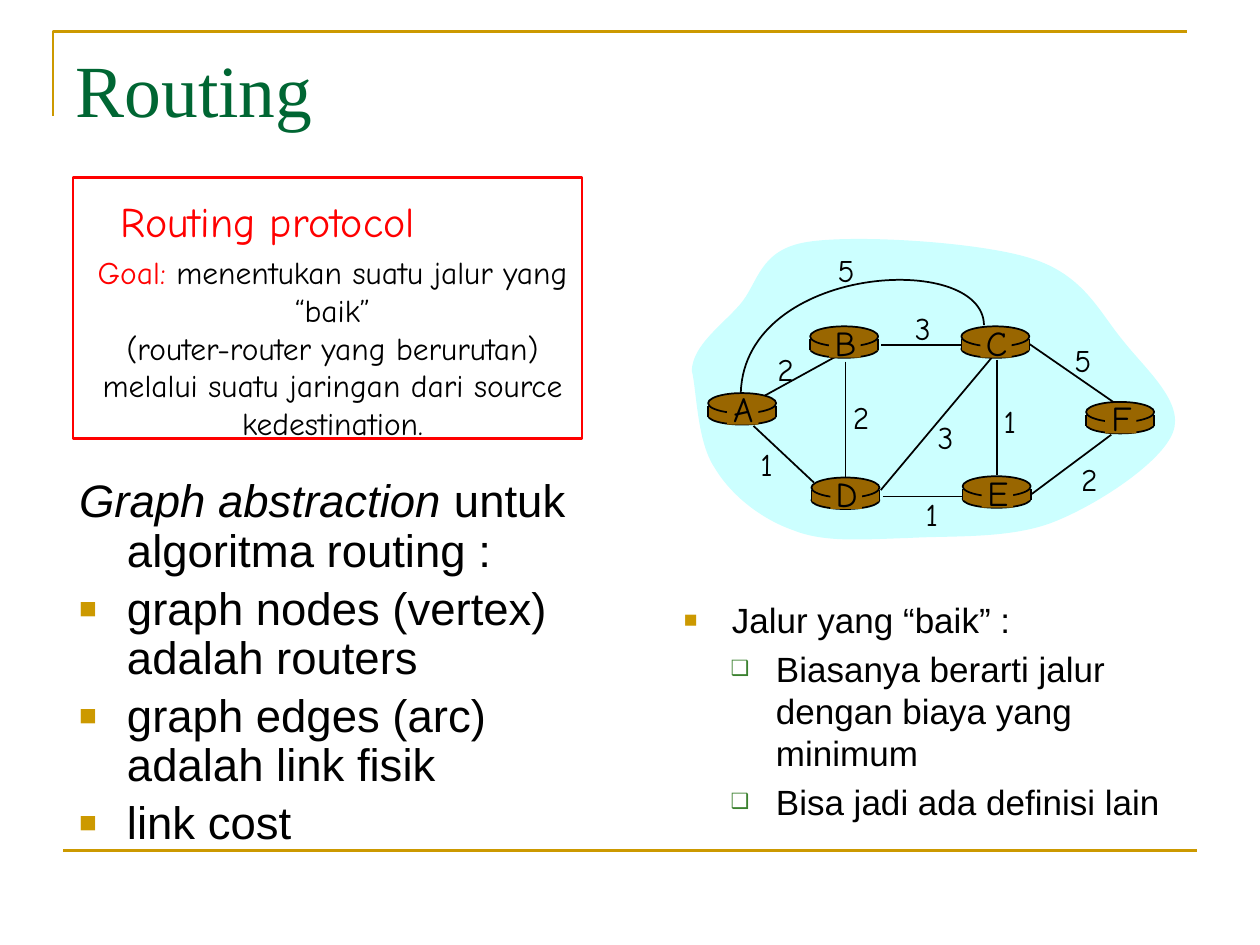
"""Build the slide on routing protocols and graph abstraction."""
from lxml.etree import SubElement
from pptx import Presentation
from pptx.dml.color import RGBColor
from pptx.enum.shapes import MSO_CONNECTOR, MSO_SHAPE
from pptx.enum.text import MSO_ANCHOR, PP_ALIGN
from pptx.oxml.ns import qn
from pptx.util import Pt

PX = 9144
HUES = {
    "gold": "CC9900", "green": "006633", "leaf": "3B812F", "red": "FF0000",
    "black": "000000", "brown": "996600", "sky": "CCFFFF",
}
SANS, SERIF, HAND = "Arial", "Times New Roman", "Comic Neue"
BULLETS = [("■", "gold", 65, 38, 38), ("❑", "leaf", 60, 73, 36)]
CLOUD = [
    (549, 294), (550, 274), (572, 259), (587, 242), (602, 225), (602, 198), (641, 192),
    (679, 186), (777, 192), (818, 205), (860, 218), (872, 247), (891, 270),
    (909, 293), (940, 319), (931, 343), (922, 367), (872, 400), (837, 414),
    (802, 428), (756, 425), (721, 427), (687, 428), (655, 431), (630, 421),
    (604, 412), (580, 393), (567, 371), (553, 350), (553, 310), (549, 294),
]
ARC = [(781, 258), (780, 199), (592, 210), (588, 311)]
ROUTERS = {"A": (562, 312), "B": (643, 259), "C": (763, 259),
           "D": (644, 379), "E": (764, 378), "F": (862, 319)}
EDGES = [
    (607, 314, 667, 281), (791, 286, 791, 377), (671, 287, 671, 380),
    (699, 389, 787, 284), (819, 392, 882, 345), (764, 394, 701, 394),
    (646, 383, 598, 338), (763, 274, 699, 274), (885, 320, 817, 273),
]
COSTS = [
    ("2", 606, 273), ("2", 666, 311), ("1", 593, 348), ("3", 733, 327), ("1", 724, 388),
    ("1", 786, 314), ("2", 847, 360), ("5", 842, 266), ("3", 715, 240), ("5", 654, 194),
]


class Deck:
    """Hold the style and the current slide."""

    def __init__(self, slide):
        self.slide = slide
        self.shapes = slide.shapes

    def hue(self, name):
        return RGBColor.from_string(HUES[name])

    def place(self, shape, *box):
        shape.left, shape.top, shape.width, shape.height = (n * PX for n in box)

    def paint(self, shape, fill, line, width):
        shape.shadow.inherit = False
        if fill:
            shape.fill.solid()
            shape.fill.fore_color.rgb = self.hue(fill)
        else:
            shape.fill.background()
        if line:
            shape.line.color.rgb = self.hue(line)
            shape.line.width = Pt(width)
        else:
            shape.line.fill.background()

    def shape(self, kind, box, fill=None, line=None, width=1):
        shape = self.shapes.add_shape(kind, *(n * PX for n in box))
        self.paint(shape, fill, line, width)

    def free(self, dots, fill=None, line=None, width=1):
        pen = self.shapes.build_freeform(*dots[0], scale=PX)
        pen.add_line_segments(dots[1:], close=bool(fill))
        shape = pen.convert_to_shape()
        self.paint(shape, fill, line, width)
        return shape

    def curve(self, knots, fill=None, line=None):
        shape = self.free(knots, fill, line)
        legs = list(shape._element.iter(qn("a:lnTo")))
        for first, *rest in zip(legs[::3], legs[1::3], legs[2::3]):
            first.tag = qn("a:cubicBezTo")
            for leg in rest:
                first.append(leg[0])
                leg.getparent().remove(leg)

    def line(self, ends, hue="black", width=1):
        line = self.shapes.add_connector(MSO_CONNECTOR.STRAIGHT, *(n * PX for n in ends))
        line.line.color.rgb = self.hue(hue)
        line.line.width = Pt(width)
        SubElement(line._element.spPr, qn("a:effectLst"))

    def font(self, para, face, size, hue):
        para.font.name = face
        para.font.size = Pt(size)
        para.font.color.rgb = self.hue(hue)

    def title(self, text, box):
        shape = self.shapes.title
        self.place(shape, *box)
        frame = shape.text_frame
        frame.text = text
        frame.vertical_anchor = MSO_ANCHOR.TOP
        para = frame.paragraphs[0]
        para.alignment = PP_ALIGN.LEFT
        self.font(para, SERIF, 42, "green")

    def frame(self, box, wrap):
        frame = self.shapes.add_textbox(*(n * PX for n in box)).text_frame
        frame.word_wrap = wrap
        return frame

    def paras(self, frame, count):
        return [frame.paragraphs[0]] + [frame.add_paragraph() for _ in range(count - 1)]

    def label(self, text, box, size, hue="black"):
        para = self.frame(box, False).paragraphs[0]
        para.text = text
        para.alignment = PP_ALIGN.CENTER
        self.font(para, HAND, size, hue)

    def goal(self, box, lead, first, second):
        top, low = self.paras(self.frame(box, True), 2)
        for para in (top, low):
            para.alignment = PP_ALIGN.CENTER
            self.font(para, HAND, 18, "black")
        run = top.add_run()
        run.text = lead
        run.font.color.rgb = self.hue("red")
        top.add_run().text = first
        low.text = second

    def bullet(self, para, level, mark):
        sign, hue, size, left, hang = BULLETS[level]
        para.level = level
        props = para._p.get_or_add_pPr()
        props.set("marL", str(left * PX))
        props.set("indent", str(-hang * PX))
        if mark:
            tint = SubElement(props, qn("a:buClr"))
            SubElement(tint, qn("a:srgbClr"), val=HUES[hue])
            SubElement(props, qn("a:buSzPct"), val=str(size * 1000))
            SubElement(props, qn("a:buFont"), typeface=SANS)
            SubElement(props, qn("a:buChar"), char=sign)

    def points(self, box, size, items, pitch=1.0, lead=None):
        frame = self.frame(box, True)
        for i, (para, (level, text)) in enumerate(zip(self.paras(frame, len(items)), items)):
            para.line_spacing = pitch
            para.space_before = Pt(size / 5)
            self.bullet(para, level, i or not lead)
            self.font(para, SANS, size, "black")
            if lead and not i:
                run = para.add_run()
                run.text = lead
                run.font.italic = True
            para.add_run().text = text

    def router(self, name, x, y):
        self.shape(MSO_SHAPE.OVAL, (x, y + 11, 54, 14), "brown", "black")
        self.shape(MSO_SHAPE.RECTANGLE, (x, y + 10, 54, 9), "brown")
        for side in (x, x + 54):
            self.line((side, y + 10, side, y + 19))
        self.shape(MSO_SHAPE.OVAL, (x, y, 54, 16), "brown", "black")
        self.shape(MSO_SHAPE.RECTANGLE, (x + 15, y + 2, 25, 23), "brown")
        self.label(name, (x + 9, y - 9, 38, 43), 20)


def main():
    show = Presentation()
    show.slide_width, show.slide_height = 1000 * PX, 750 * PX
    deck = Deck(show.slides.add_slide(show.slide_layouts[5]))
    deck.free([(42, 92), (42, 25), (942, 25)], line="gold", width=1.5)
    deck.line((50, 675, 950, 675), "gold", 1.5)
    deck.title("Routing", (50, 30, 900, 109))
    deck.points((53, 375, 417, 342), 26, [
        (0, "untuk algoritma routing :"),
        (0, "graph nodes (vertex) adalah routers"),
        (0, "graph edges (arc) adalah link fisik"),
        (0, "link cost"),
    ], 0.9, "Graph abstraction ")
    deck.goal((61, 196, 406, 160), "Goal:", " menentukan suatu jalur yang “baik”",
              "(router-router yang berurutan) melalui suatu jaringan dari source kedestination.")
    deck.shape(MSO_SHAPE.RECTANGLE, (58, 141, 404, 207), line="red", width=1.5)
    deck.label("Routing protocol", (75, 150, 275, 50), 24, "red")
    deck.curve(CLOUD, fill="sky")
    for ends in EDGES:
        deck.line(ends)
    deck.curve(ARC, line="black")
    for name, spot in ROUTERS.items():
        deck.router(name, *spot)
    for cost, x, y in COSTS:
        deck.label(cost, (x, y, 31 if cost == "1" else 35, 40), 18)
    deck.points((533, 470, 417, 186), 20, [
        (0, "Jalur yang “baik” :"),
        (1, "Biasanya berarti jalur dengan biaya yang minimum"),
        (1, "Bisa jadi ada definisi lain"),
    ])
    show.save("out.pptx")


if __name__ == "__main__":
    main()
